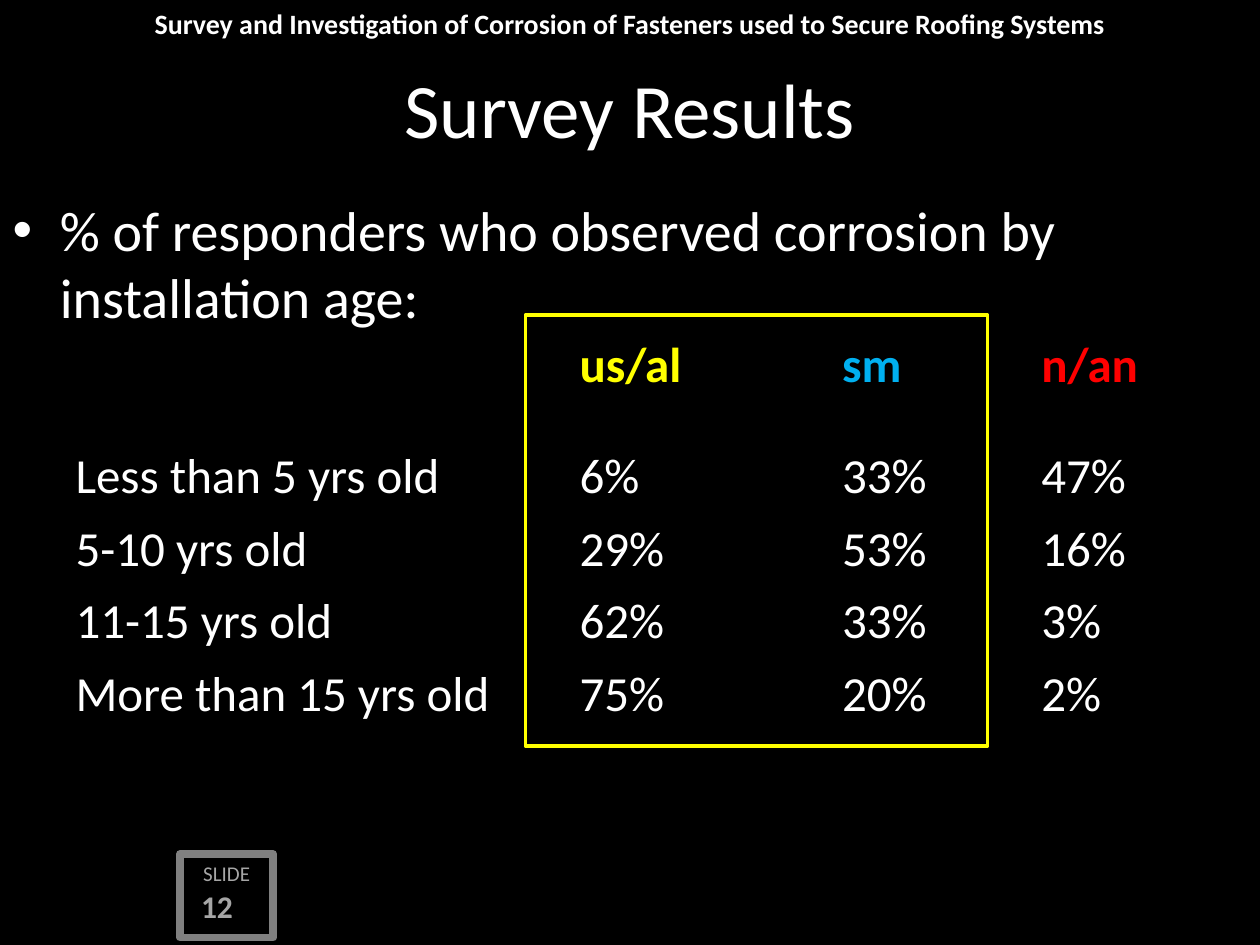
"""Build the survey results slide on corrosion by installation age."""
from pptx import Presentation
from pptx.dml.color import RGBColor as RGB
from pptx.enum.shapes import MSO_SHAPE as SHAPE
from pptx.enum.text import MSO_ANCHOR as ANCHOR, PP_ALIGN as ALIGN
from pptx.oxml.ns import qn
from pptx.util import Cm, Pt

HUES = {
    "black": "000000", "white": "FFFFFF", "grey": "808080", "pale": "A6A6A6",
    "yellow": "FFFF00", "blue": "00B0F0", "red": "FF0000",
}


def hue(name):
    return RGB.from_string(HUES[name])


def write(frame, text, tint, align=ALIGN.LEFT, **look):
    frame.word_wrap = True
    para = frame.paragraphs[0]
    para.alignment = align
    para.space_before = Pt(0)
    run = para.add_run()
    run.text = text
    run.font.color.rgb = hue(tint)
    for key, value in {"name": "Calibri", "bold": False, **look}.items():
        setattr(run.font, key, value)


deck = Presentation()
deck.slide_width, deck.slide_height = Cm(25.4), Cm(19.05)
slide = deck.slides.add_slide(deck.slide_layouts[1])
slide.background.fill.solid()
slide.background.fill.fore_color.rgb = hue("black")
shapes = slide.shapes

title, body = slide.placeholders
places = ((title, (0, 0.84, 25.4, 2.67)), (body, (0, 3.81, 25.4, 12.9)))
for holder, place in places:
    for side, size in zip(("left", "top", "width", "height"), place):
        setattr(holder, side, Cm(size))
title.text_frame.vertical_anchor = ANCHOR.MIDDLE
write(title.text_frame, "Survey Results", "white", ALIGN.CENTER, size=Pt(44))
write(body.text_frame, "% of responders who observed corrosion by installation age:",
      "white", size=Pt(32))

badge = shapes.add_shape(SHAPE.RECTANGLE, Cm(3.63), Cm(17.22), Cm(1.88), Cm(1.68))
badge.fill.solid()
badge.fill.fore_color.rgb = hue("black")
badge.text_frame.vertical_anchor = ANCHOR.TOP
write(badge.text_frame, "SLIDE", "pale", ALIGN.CENTER, size=Pt(12))

page = shapes.add_textbox(Cm(3.5), Cm(17.75), Cm(1.75), Cm(1.09))
write(page.text_frame, "12", "pale", ALIGN.CENTER, size=Pt(18), bold=True)
head = shapes.add_textbox(0, 0, Cm(25.4), Cm(0.76))
write(head.text_frame,
      "Survey and Investigation of Corrosion of Fasteners used to Secure Roofing Systems",
      "white", ALIGN.CENTER, size=Pt(16), bold=True)

rows = [
    ("", "us/al", "sm", "n/an"),
    ("Less than 5 yrs old", "6%", "33%", "47%"),
    ("5-10 yrs old", "29%", "53%", "16%"),
    ("11-15 yrs old", "62%", "33%", "3%"),
    ("More than 15 yrs old", "75%", "20%", "2%"),
]
tints = ("white", "yellow", "blue", "red")
widths = (10.16, 5.29, 4.02, 3.81)
heights = (2.24,) + (1.46,) * 4
frame = shapes.add_table(len(rows), len(widths), Cm(1.27), Cm(6.65),
                         Cm(sum(widths)), Cm(sum(heights)))
table = frame.table
table.first_row = table.horz_banding = False
style = frame._element.find(".//" + qn("a:tableStyleId"))
style.text = "{2D5ABB26-0587-4C30-8999-92F81FD0307C}"
for col, width in zip(table.columns, widths):
    col.width = Cm(width)
for r, (row, height) in enumerate(zip(rows, heights)):
    table.rows[r].height = Cm(height)
    for c, text in enumerate(row):
        cell = table.cell(r, c)
        cell.fill.solid()
        cell.fill.fore_color.rgb = hue("black")
        if text:
            write(cell.text_frame, text, "white" if r else tints[c],
                  size=Pt(28), bold=r == 0)

box = shapes.add_shape(SHAPE.RECTANGLE, Cm(10.59), Cm(6.35), Cm(9.32), Cm(8.69))
box.fill.background()
for shape, tint, width in ((badge, "grey", 4.5), (box, "yellow", 2)):
    shape.shadow.inherit = False
    shape.line.color.rgb = hue(tint)
    shape.line.width = Pt(width)

deck.save("out.pptx")
